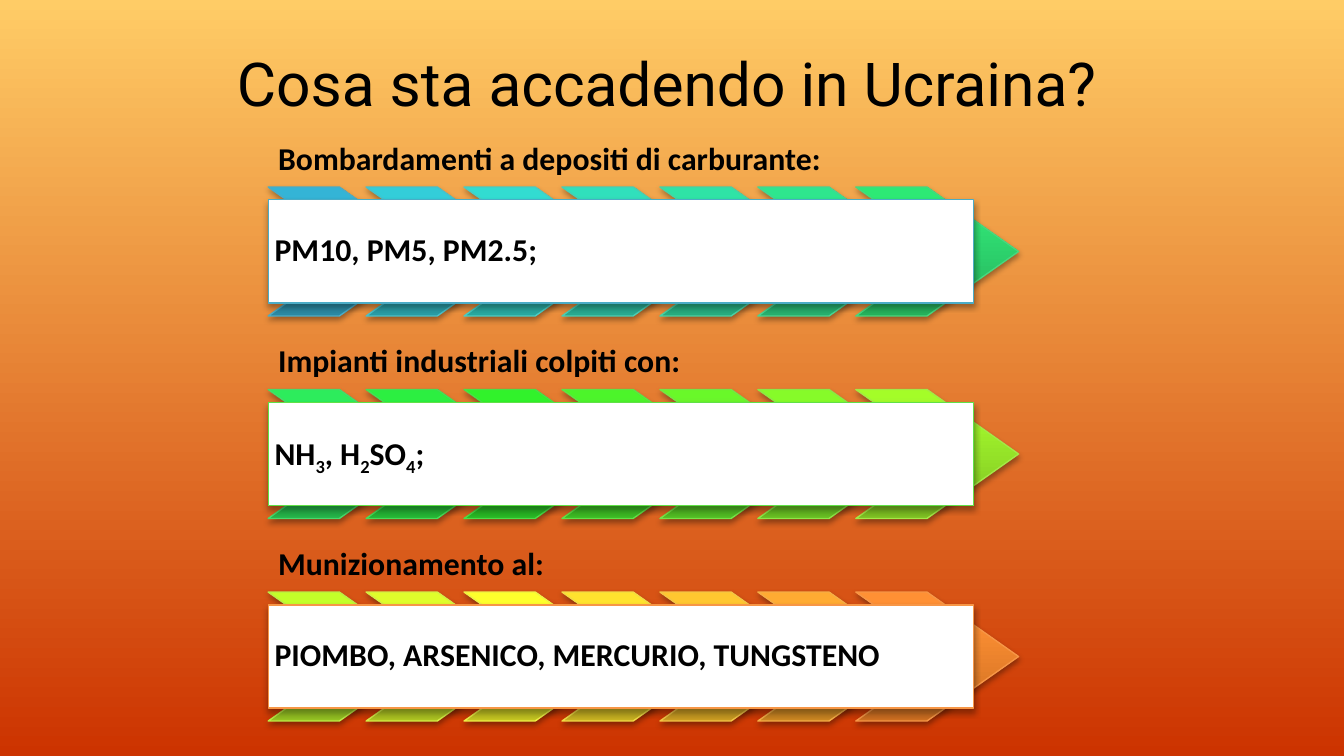
from copy import deepcopy

from lxml import etree
from pptx import Presentation
from pptx.dml.color import RGBColor
from pptx.enum import shapes, text
from pptx.oxml.ns import qn
from pptx.util import Pt

BLACK = RGBColor(0x00, 0x00, 0x00)
WHITE = RGBColor(0xFF, 0xFF, 0xFF)
SKY_TOP = RGBColor(0xFF, 0xCC, 0x66)
SKY_BOTTOM = RGBColor(0xCC, 0x33, 0x00)


def palette(*rows):
    return [[RGBColor.from_string(code) for code in row.split()] for row in rows]


BLUE_TO_GREEN = palette(
    "2A88A2 37B1D2 34B4D6 4BACC6",
    "299BA4 36C9D5 33CDD9 4AC0C9",
    "28A79E 35D8CE 32DCD1 4ACCC3",
    "28A98F 33DBB9 30E0BC 49CEB3",
    "27AB7E 32DFA4 2FE3A6 49D1A3",
    "26AE6D 32E28D 2EE68E 48D491",
    "25B05B 31E576 2DE975 48D77E",
)
GREEN_TO_LIME = palette(
    "25B248 30E85D 2DEC5C 47D96B",
    "24B534 2FEB43 2CEF41 47DC57",
    "28B724 34ED2E 31F22B 4BDE47",
    "3CB923 4EF02E 4CF52A 60E146",
    "51BB23 6AF32D 69F829 76E346",
    "67BD22 86F62D 86FB29 8DE646",
    "7DBF22 A3F82C A4FD28 A4E846",
)
LIME_TO_ORANGE = palette(
    "94C122 C1FB2C C3FF29 BCEA46",
    "ACC321 DFFD2B E1FF2B D5EC46",
    "C4C521 FEFF2C FEFF2D EEEF46",
    "C7B121 FFE32E FFE32F F1DA46",
    "C99B21 FFC730 FFC731 F3C446",
    "CA8521 FFAB32 FFAC33 F5AD46",
    "CC6E20 FF9034 FF9136 F79646",
)
PANEL_EDGES = [BLUE_TO_GREEN[0][3], GREEN_TO_LIME[3][3], LIME_TO_ORANGE[6][3]]

CAUSES = [
    ("Bombardamenti a depositi di carburante:", ["PM10, PM5, PM2.5;"], BLUE_TO_GREEN),
    ("Impianti industriali colpiti con:", ["NH", "3", ", H", "2", "SO", "4", ";"], GREEN_TO_LIME),
    ("Munizionamento al:", ["PIOMBO, ARSENICO, MERCURIO, TUNGSTENO"], LIME_TO_ORANGE),
]


def paint_gradient(fill, angle, stops):
    fill.gradient()
    fill.gradient_angle = angle
    last = fill.gradient_stops[-1]._gs
    for _ in stops[2:]:
        last.addnext(deepcopy(last))
    for stop, (position, colour) in zip(fill.gradient_stops, stops):
        stop.position = position
        stop.color.rgb = colour


def outline_and_shadow(shape, edge):
    shape.line.color.rgb = edge
    shape.line.width = Pt(0.75)
    shape.shadow.inherit = False
    effects = shape._element.spPr.find(qn("a:effectLst"))
    shadow = etree.SubElement(
        effects, qn("a:outerShdw"), blurRad=str(Pt(3.15)), dist=str(Pt(1.8)),
        dir="5400000", rotWithShape="0")
    black = etree.SubElement(shadow, qn("a:srgbClr"), val=str(BLACK))
    etree.SubElement(black, qn("a:alpha"), val="35000")


def write_line(shape, parts, font_name, size, anchor, inset, align, bold=False):
    frame = shape.text_frame
    frame.word_wrap = True
    frame.vertical_anchor = anchor
    frame.margin_left = frame.margin_right = Pt(inset)
    frame.margin_top = frame.margin_bottom = Pt(inset)
    line = frame.paragraphs[0]
    line.alignment = align
    line.font.name = font_name
    line.font.size = Pt(size)
    line.font.bold = bold
    line.font.color.rgb = BLACK
    for index, part in enumerate(parts):
        run = line.add_run()
        run.text = part
        if index % 2:
            run._r.get_or_add_rPr().set("baseline", "-25000")
    return line


def add_title(slide, left, top, width, height):
    title = slide.shapes.add_textbox(Pt(left), Pt(top), Pt(width), Pt(height))
    write_line(title, ["Cosa sta accadendo in Ucraina?"], "Roboto", 32.4,
               text.MSO_ANCHOR.MIDDLE, 5, text.PP_ALIGN.CENTER)


def add_cause(slide, left, top, width, heading, substances, colours, panel_edge):
    label_height, chevron_height, panel_height = 33.8, 69.1, 55.4
    chevron_width = 87.2
    step = (width - chevron_width) / (len(colours) - 1)
    chevron_top = top + label_height

    label = slide.shapes.add_textbox(Pt(left), Pt(top), Pt(373), Pt(label_height))
    write_line(label, [heading], "Calibri", 17, text.MSO_ANCHOR.BOTTOM, 5.3,
               text.PP_ALIGN.LEFT, True).line_spacing = 0.9

    for index, (dark, middle, light, edge) in enumerate(colours):
        chevron = slide.shapes.add_shape(
            shapes.MSO_SHAPE.CHEVRON, Pt(left + index * step), Pt(chevron_top),
            Pt(chevron_width), Pt(chevron_height))
        chevron.adjustments[0] = 0.71
        paint_gradient(chevron.fill, 90, [(0, dark), (0.8, middle), (1, light)])
        outline_and_shadow(chevron, edge)

    panel = slide.shapes.add_shape(
        shapes.MSO_SHAPE.RECTANGLE, Pt(left),
        Pt(chevron_top + (chevron_height - panel_height) / 2), Pt(378), Pt(panel_height))
    panel.fill.solid()
    panel.fill.fore_color.rgb = WHITE
    outline_and_shadow(panel, panel_edge)
    write_line(panel, substances, "Calibri", 17, text.MSO_ANCHOR.MIDDLE, 3.4,
               text.PP_ALIGN.LEFT, True).line_spacing = 0.9


def main():
    deck = Presentation()
    deck.slide_width, deck.slide_height = Pt(720), Pt(405)
    slide = deck.slides.add_slide(deck.slide_layouts[6])
    paint_gradient(slide.background.fill, 270, [(0, SKY_TOP), (1, SKY_BOTTOM)])
    add_title(slide, -20, 10, 754.5, 68)
    for row, (cause, panel_edge) in enumerate(zip(CAUSES, PANEL_EDGES)):
        add_cause(slide, 143.7, 66.4 + row * 108.5, 402, *cause, panel_edge)
    deck.save("out.pptx")


if __name__ == "__main__":
    main()
